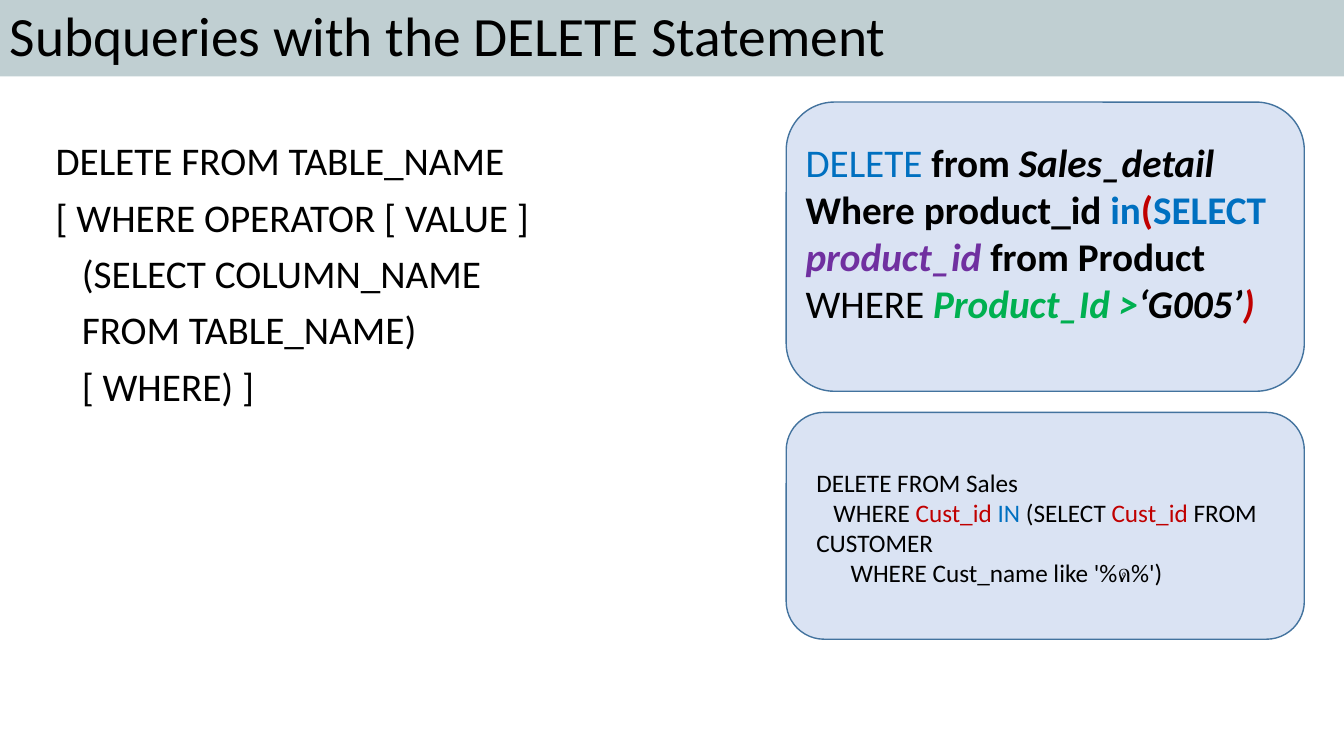
from dataclasses import dataclass

from pptx import Presentation
from pptx.dml.color import RGBColor as RGB
from pptx.enum.shapes import MSO_SHAPE as SHAPE
from pptx.enum.text import MSO_ANCHOR as ANCHOR, PP_ALIGN as ALIGN
from pptx.util import Inches, Pt


@dataclass(frozen=True)
class Theme:
    font: str = "Calibri"
    title_size: float = 39.6
    body_size: float = 28
    small_size: float = 18
    black: str = "000000"
    blue: str = "0070C0"
    red: str = "C00000"
    purple: str = "7030A0"
    green: str = "00B050"
    banner: str = "C0CFD2"
    card: str = "DAE3F3"
    card_line: str = "43739E"


class SlideBuilder:
    """Draws on one slide; each box is (left, top, width, height) in percent."""

    def __init__(self, prs, theme):
        self.theme = theme
        self.slide_size = prs.slide_width, prs.slide_height
        self.shapes = prs.slides.add_slide(prs.slide_layouts[6]).shapes

    def place(self, box):
        return [round(share * side / 100)
                for share, side in zip(box, self.slide_size * 2)]

    def panel(self, box, fill, line=None, kind=SHAPE.RECTANGLE):
        sp = self.shapes.add_shape(kind, *self.place(box))
        sp.shadow.inherit = False
        sp.fill.solid()
        sp.fill.fore_color.rgb = RGB.from_string(fill)
        if line:
            sp.line.color.rgb = RGB.from_string(line)
            sp.line.width = Pt(1)
        else:
            sp.line.fill.background()
        return sp

    def banner(self, box, title):
        sp = self.panel(box, self.theme.banner)
        sp.text_frame.vertical_anchor = ANCHOR.MIDDLE
        self.fill_text(sp.text_frame, [(0, [(title,)])], self.theme.title_size, spacing=0.9)

    def card(self, box):
        self.panel(box, self.theme.card, self.theme.card_line, SHAPE.ROUNDED_RECTANGLE)

    def text(self, box, lines, size, **layout):
        tf = self.shapes.add_textbox(*self.place(box)).text_frame
        self.fill_text(tf, lines, size, **layout)

    def fill_text(self, tf, lines, size, spacing=1.0, before=0):
        """Each line is (first-line indent in inches, runs); a run is (text, colour, style)."""
        tf.word_wrap = True
        for n, (indent, runs) in enumerate(lines):
            p = tf.paragraphs[0] if n == 0 else tf.add_paragraph()
            p.alignment = ALIGN.LEFT
            p.line_spacing = spacing
            p.space_before = Pt(before)
            p.font.name = self.theme.font
            p.font.size = Pt(size)
            p.font.color.rgb = RGB.from_string(self.theme.black)
            if indent:
                p._p.get_or_add_pPr().set("indent", str(Inches(indent)))
            for run in runs:
                self.add_run(p, *run)

    def add_run(self, p, text, color=None, style=""):
        r = p.add_run()
        r.text = text
        if color:
            r.font.color.rgb = RGB.from_string(color)
        if "b" in style:
            r.font.bold = True
        if "i" in style:
            r.font.italic = True


def main():
    prs = Presentation()
    prs.slide_width, prs.slide_height = Inches(13.33), Inches(7.5)
    t = Theme()
    s = SlideBuilder(prs, t)

    s.banner((0, 0, 100, 10.1), "Subqueries with the DELETE Statement")

    syntax = [
        (0, "DELETE FROM TABLE_NAME"),
        (0, "[ WHERE OPERATOR [ VALUE ]"),
        (0.26, "(SELECT COLUMN_NAME"),
        (0.26, "FROM TABLE_NAME)"),
        (0.26, "[ WHERE) ]"),
    ]
    s.text((3.4, 18.1, 45.1, 63.5), [(indent, [(line,)]) for indent, line in syntax],
           t.body_size, spacing=0.9, before=10)

    s.card((58.5, 13.5, 38.55, 38.25))
    s.text((59.2, 17.6, 37.2, 26.5), [
        (0, [("DELETE", t.blue), (" from ", None, "b"), ("Sales_detail", None, "bi")]),
        (0, [("Where product_id ", None, "b"), ("in", t.blue, "b"), ("(", t.red, "b"),
             ("SELECT ", t.blue, "b"), ("product_id", t.purple, "bi"),
             (" from Product", None, "b")]),
        (0, [("WHERE ",), ("Product_Id >", t.green, "bi"), ("‘G005’", None, "bi"),
             (")", t.red, "bi")]),
    ], t.body_size)

    s.card((58.5, 54.55, 38.55, 30))
    s.text((60, 61.1, 35.55, 17.5), [
        (0, [("DELETE FROM Sales",)]),
        (0.17, [("WHERE ",), ("Cust_id ", t.red), ("IN", t.blue), (" (SELECT ",),
                ("Cust_id", t.red), (" FROM CUSTOMER",)]),
        (0.34, [("WHERE Cust_name like '%ด%')",)]),
    ], t.small_size)

    prs.save("out.pptx")


if __name__ == "__main__":
    main()
